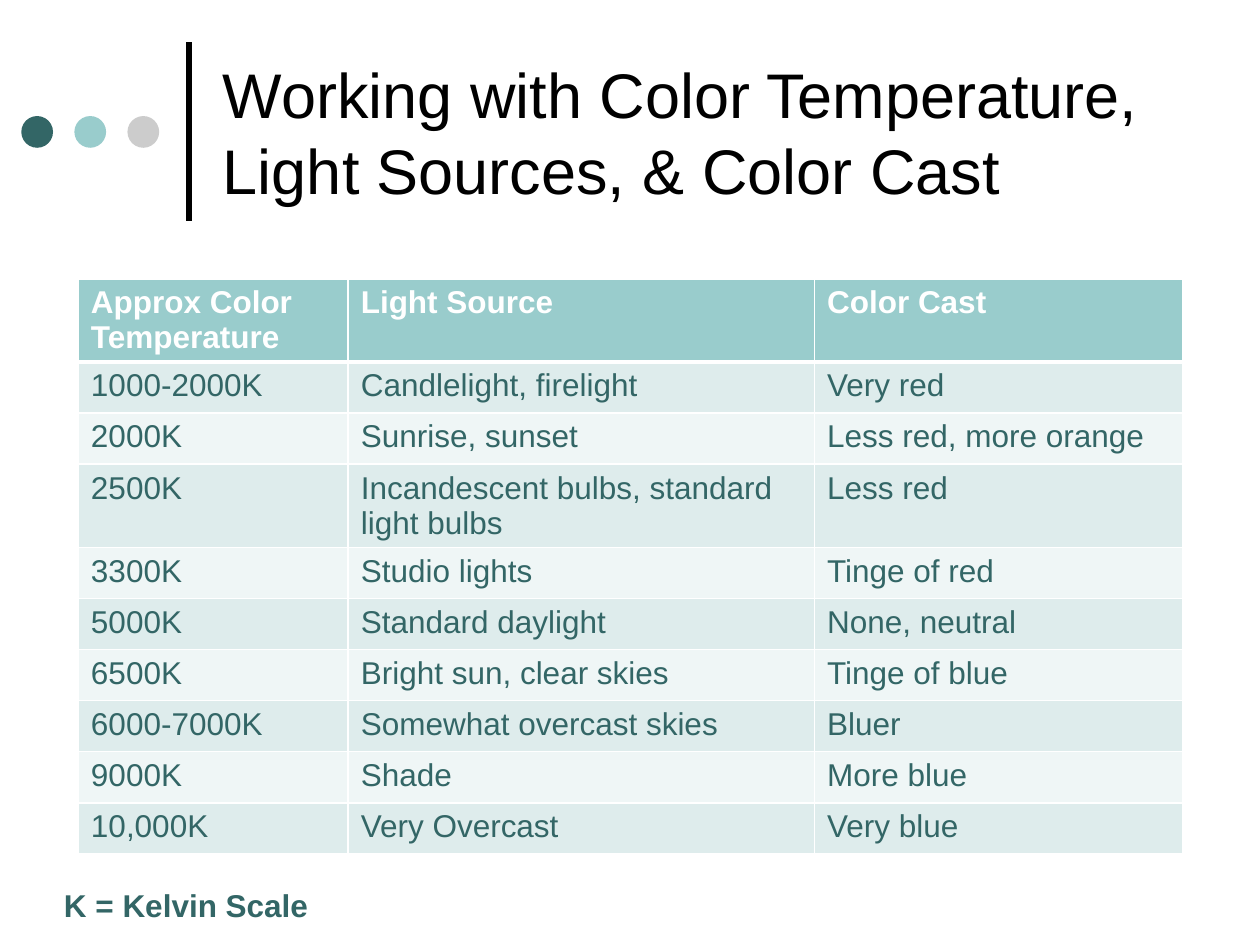
from lxml import etree
from pptx import Presentation
from pptx.dml.color import RGBColor
from pptx.enum.shapes import MSO_CONNECTOR, MSO_SHAPE
from pptx.enum.text import MSO_ANCHOR, MSO_AUTO_SIZE, PP_ALIGN
from pptx.oxml.ns import qn
from pptx.util import Cm, Pt

ELLIPSE = MSO_SHAPE.OVAL
STRAIGHT = MSO_CONNECTOR.STRAIGHT
LEFT = PP_ALIGN.LEFT
MIDDLE = MSO_ANCHOR.MIDDLE
NO_FIT = MSO_AUTO_SIZE.NONE
GROW = MSO_AUTO_SIZE.SHAPE_TO_FIT_TEXT

BLACK = RGBColor(0x00, 0x00, 0x00)
WHITE = RGBColor(0xFF, 0xFF, 0xFF)
DARK_TEAL = RGBColor(0x33, 0x66, 0x66)
TEAL = RGBColor(0x99, 0xCC, 0xCC)
GREY = RGBColor(0xCC, 0xCC, 0xCC)
BAND_DARK = RGBColor(0xDE, 0xEC, 0xEC)
BAND_LIGHT = RGBColor(0xEF, 0xF6, 0xF6)

TITLE_FONT = {"name": "Arial", "size": Pt(36), "bold": False}
STRONG_FONT = {"name": "Arial", "size": Pt(18), "bold": True}
BODY_FONT = {"name": "Arial", "size": Pt(18), "bold": False}

COLUMN_WIDTHS = [5.44, 9.4, 7.42]
ROW_HEIGHT = 1.03
ROWS = [
    ("Approx Color Temperature", "Light Source", "Color Cast"),
    ("1000-2000K", "Candlelight, firelight", "Very red"),
    ("2000K", "Sunrise, sunset", "Less red, more orange"),
    ("2500K", "Incandescent bulbs, standard light bulbs", "Less red"),
    ("3300K", "Studio lights", "Tinge of red"),
    ("5000K", "Standard daylight", "None, neutral"),
    ("6500K", "Bright sun, clear skies", "Tinge of blue"),
    ("6000-7000K", "Somewhat overcast skies", "Bluer"),
    ("9000K", "Shade", "More blue"),
    ("10,000K", "Very Overcast", "Very blue"),
]


def write_text(frame, text, font_format, color):
    para = frame.paragraphs[0]
    para.alignment = LEFT
    span = para.add_run()
    span.text = text
    for name, value in font_format.items():
        setattr(span.font, name, value)
    span.font.color.rgb = color


def add_rule(page):
    rule = page.shapes.add_connector(STRAIGHT, Cm(3.81), Cm(4.45), Cm(3.81), Cm(0.84))
    rule.line.color.rgb = BLACK
    rule.line.width = Pt(3)
    etree.SubElement(rule._element.spPr, qn("a:effectLst"))


def add_dots(page):
    for index, color in enumerate((DARK_TEAL, TEAL, GREY)):
        left = Cm(0.43 + 1.07 * index)
        dot = page.shapes.add_shape(ELLIPSE, left, Cm(2.34), Cm(0.64), Cm(0.64))
        dot.shadow.inherit = False
        dot.fill.solid()
        dot.fill.fore_color.rgb = color
        dot.line.fill.background()


def set_title(page, text):
    title = page.shapes.title
    title.left, title.top = Cm(4.24), Cm(0.53)
    title.width, title.height = Cm(20.73), Cm(4.24)
    frame = title.text_frame
    frame.word_wrap = True
    frame.auto_size = NO_FIT
    frame.vertical_anchor = MIDDLE
    write_text(frame, text, TITLE_FONT, BLACK)


def set_borders(cell, top, bottom):
    """Draw white cell edges; top and bottom are widths in points."""
    properties = cell._tc.get_or_add_tcPr()
    for tag, width in (("lnL", 1), ("lnR", 1), ("lnT", top), ("lnB", bottom)):
        edge = etree.SubElement(properties, qn(f"a:{tag}"), w=str(Pt(width)))
        fill = etree.SubElement(edge, qn("a:solidFill"))
        etree.SubElement(fill, qn("a:srgbClr"), val=str(WHITE))


def add_light_table(page):
    table = page.shapes.add_table(
        len(ROWS), len(COLUMN_WIDTHS), Cm(1.58), Cm(5.62),
        Cm(sum(COLUMN_WIDTHS)), Cm(ROW_HEIGHT * len(ROWS))).table
    for column, width in zip(table.columns, COLUMN_WIDTHS):
        column.width = Cm(width)
    for row_index, texts in enumerate(ROWS):
        table.rows[row_index].height = Cm(ROW_HEIGHT)
        if row_index == 0:
            fill, font_format, color = TEAL, STRONG_FONT, WHITE
        else:
            fill = BAND_DARK if row_index % 2 else BAND_LIGHT
            font_format, color = BODY_FONT, DARK_TEAL
        for column_index, text in enumerate(texts):
            cell = table.cell(row_index, column_index)
            set_borders(cell, 3 if row_index == 1 else 1, 3 if row_index == 0 else 1)
            cell.fill.solid()
            cell.fill.fore_color.rgb = fill
            write_text(cell.text_frame, text, font_format, color)


def add_note(page, text):
    box = page.shapes.add_textbox(Cm(1.04), Cm(17.73), Cm(6.2), Cm(1.02))
    frame = box.text_frame
    frame.word_wrap = True
    frame.auto_size = GROW
    write_text(frame, text, STRONG_FONT, DARK_TEAL)


def main():
    deck = Presentation()
    deck.slide_width, deck.slide_height = Cm(25.4), Cm(19.05)
    page = deck.slides.add_slide(deck.slide_layouts.get_by_name("Title Only"))
    add_rule(page)
    add_dots(page)
    set_title(page, "Working with Color Temperature, Light Sources, & Color Cast")
    add_light_table(page)
    add_note(page, "K = Kelvin Scale")
    deck.save("out.pptx")


if __name__ == "__main__":
    main()
